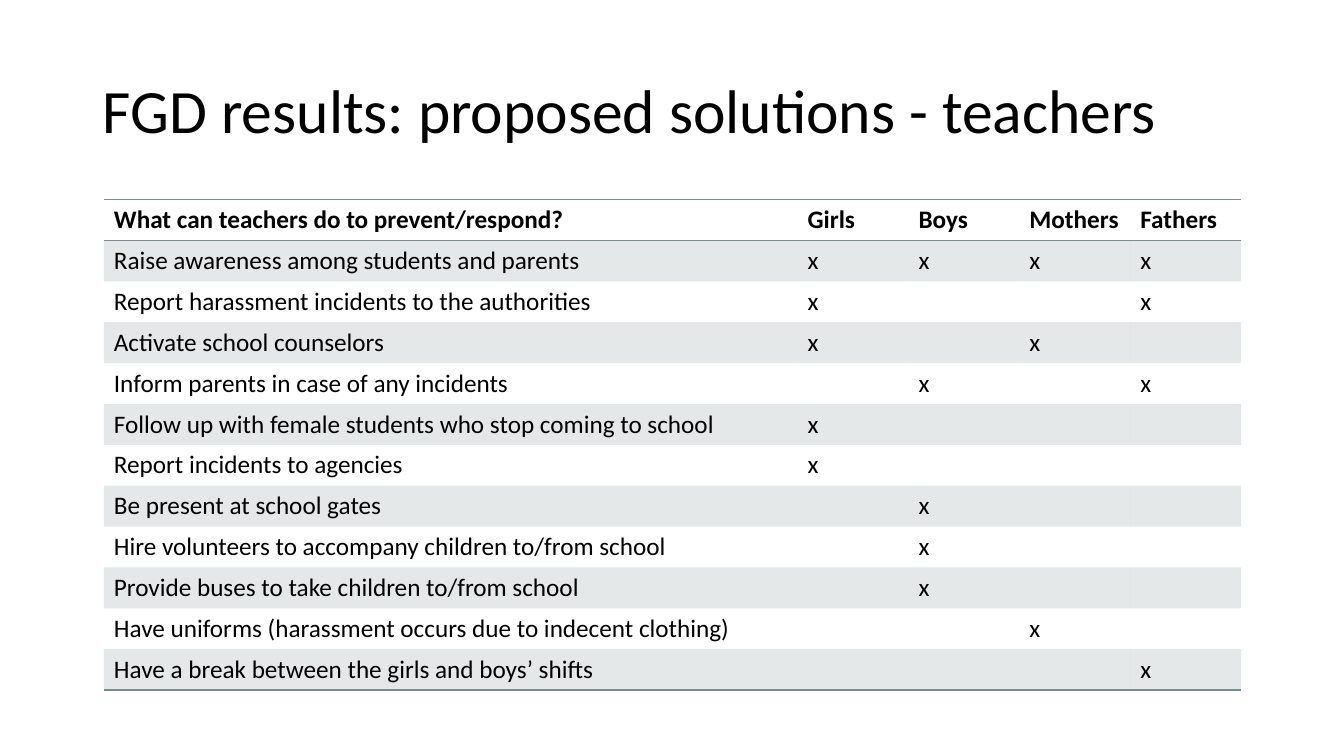
"""Build the slide of solutions for teachers proposed in focus group discussions."""
from lxml.etree import SubElement
from pptx import Presentation
from pptx.dml.color import RGBColor
from pptx.enum.text import MSO_ANCHOR, PP_ALIGN
from pptx.oxml.ns import qn
from pptx.util import Inches, Pt

TITLE = "FGD results: proposed solutions - teachers"
QUESTION = "What can teachers do to prevent/respond?"
GROUPS = ["Girls", "Boys", "Mothers", "Fathers"]
SOLUTIONS = [
    ("Raise awareness among students and parents", GROUPS),
    ("Report harassment incidents to the authorities", ["Girls", "Fathers"]),
    ("Activate school counselors", ["Girls", "Mothers"]),
    ("Inform parents in case of any incidents", ["Boys", "Fathers"]),
    ("Follow up with female students who stop coming to school", ["Girls"]),
    ("Report incidents to agencies", ["Girls"]),
    ("Be present at school gates", ["Boys"]),
    ("Hire volunteers to accompany children to/from school", ["Boys"]),
    ("Provide buses to take children to/from school", ["Boys"]),
    ("Have uniforms (harassment occurs due to indecent clothing)", ["Mothers"]),
    ("Have a break between the girls and boys’ shifts", ["Fathers"]),
]

FONT = "Calibri"
BLACK = RGBColor(0x00, 0x00, 0x00)
GREY = RGBColor(0x7A, 0x8C, 0x8E)
BAND_ALPHA = "20000"
PLAIN_TABLE_STYLE = "{2D5ABB26-0587-4C30-8999-92F81FD0307C}"
SOLUTION_WIDTH, GROUP_WIDTH = 6.88, 1.1


def style_paragraph(paragraph, size, bold=False):
    font = paragraph.font
    font.name, font.size, font.bold = FONT, Pt(size), bold
    font.color.rgb = BLACK


def add_border(cell, side):
    line = SubElement(cell._tc.get_or_add_tcPr(), qn(f"a:{side}"), w=str(Pt(1)))
    SubElement(SubElement(line, qn("a:solidFill")), qn("a:srgbClr"), val=str(GREY))


def fill_band(cell):
    cell.fill.solid()
    cell.fill.fore_color.rgb = GREY
    color = cell._tc.tcPr.find(qn("a:solidFill")).find(qn("a:srgbClr"))
    SubElement(color, qn("a:alpha"), val=BAND_ALPHA)


def add_title(slide):
    title = slide.shapes.title
    title.left, title.top = Inches(0.92), Inches(0.4)
    title.width, title.height = Inches(11.5), Inches(1.45)
    title.text_frame.text = TITLE
    title.text_frame.vertical_anchor = MSO_ANCHOR.MIDDLE
    paragraph = title.text_frame.paragraphs[0]
    paragraph.alignment = PP_ALIGN.LEFT
    paragraph.line_spacing = 0.9
    style_paragraph(paragraph, 44)


def add_solutions_table(slide):
    rows = [[QUESTION, *GROUPS]]
    for solution, supporters in SOLUTIONS:
        rows.append([solution, *("x" if group in supporters else "" for group in GROUPS)])
    widths = [SOLUTION_WIDTH] + [GROUP_WIDTH] * len(GROUPS)
    table = slide.shapes.add_table(
        len(rows), len(widths), Inches(1.03), Inches(1.98), Inches(sum(widths)), Inches(4.87)
    ).table
    table.horz_banding = False
    table._tbl.tblPr.find(qn("a:tableStyleId")).text = PLAIN_TABLE_STYLE
    for column, width in zip(table.columns, widths):
        column.width = Inches(width)

    for row_index, row in enumerate(rows):
        is_header = row_index == 0
        for column_index, text in enumerate(row):
            cell = table.cell(row_index, column_index)
            cell.text = text
            style_paragraph(cell.text_frame.paragraphs[0], 18, is_header)
            if is_header:
                add_border(cell, "lnT")
            if is_header or row_index == len(rows) - 1:
                add_border(cell, "lnB")
            if row_index % 2:
                fill_band(cell)
            else:
                cell.fill.background()


def main():
    presentation = Presentation()
    presentation.slide_width, presentation.slide_height = Inches(13.33), Inches(7.5)
    slide = presentation.slides.add_slide(presentation.slide_layouts[5])
    add_title(slide)
    add_solutions_table(slide)
    presentation.save("out.pptx")


if __name__ == "__main__":
    main()
